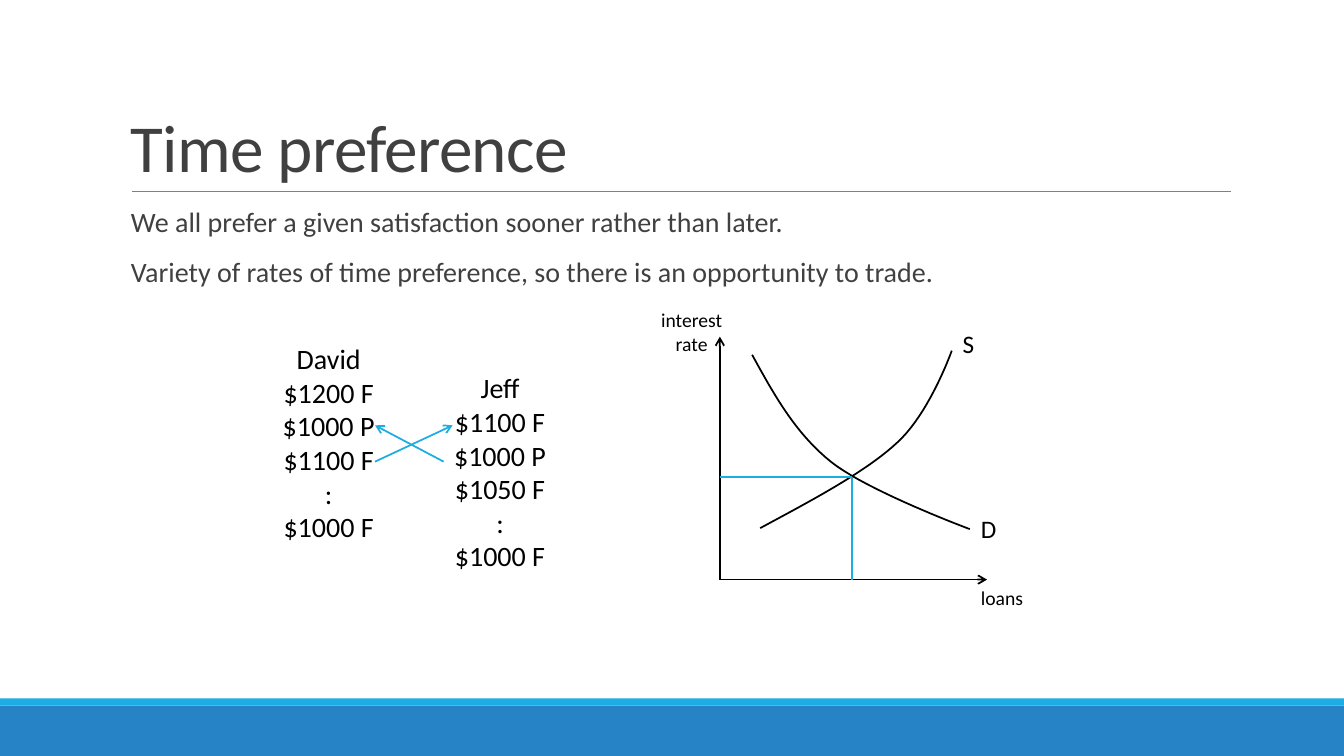
"""Build the time preference slide: two borrowers' value scales and a loan market."""
from dataclasses import dataclass

from lxml.etree import SubElement
from pptx import Presentation
from pptx.dml.color import RGBColor
from pptx.enum.shapes import MSO_CONNECTOR, MSO_SHAPE
from pptx.enum.text import MSO_ANCHOR, PP_ALIGN
from pptx.oxml.ns import qn
from pptx.util import Inches, Pt


@dataclass(frozen=True)
class Theme:
    font: str = "Calibri"
    heading: str = "404040"
    ink: str = "000000"
    rule: str = "808080"
    accent: str = "1CADE4"
    band: str = "2683C6"
    title_size: int = 48
    body_size: int = 20
    curve_size: int = 18
    axis_size: int = 14
    hairline: float = 0.5
    stroke: float = 1.25


THEME = Theme()
SLIDE_SIZE = (13.33, 7.5)
TITLE = "Time preference"
STATEMENTS = [
    "We all prefer a given satisfaction sooner rather than later.",
    "Variety of rates of time preference, so there is an opportunity to trade.",
]
BANDS = [((0, 7, 13.33, 0.5), THEME.band), ((0, 6.93, 13.33, 0.07), THEME.accent)]
SCALES = [
    ((2.7, 3.34, 1.12, 2.12),
     ["David", "$1200 F", "$1000 P", "$1100 F", ":", "$1000 F"]),
    ((4.4, 3.63, 1.12, 2.12),
     ["Jeff", "$1100 F", "$1000 P", "$1050 F", ":", "$1000 F"]),
]
TRADES = [((3.72, 4.58), (4.49, 4.22)), ((4.4, 4.58), (3.72, 4.22))]
ORIGIN = (7.14, 5.75)
AXIS_ENDS = [(7.14, 3.34), (9.79, 5.75)]
EQUILIBRIUM = (8.45, 4.73)
DEMAND = [(7.46, 3.52), (7.67, 3.9), (7.88, 4.29), (8.24, 4.58),
          (8.6, 4.87), (9.62, 5.25), (9.62, 5.25)]
SUPPLY = [(7.54, 5.24), (8.06, 4.96), (8.59, 4.68), (8.9, 4.39),
          (9.22, 4.1), (9.44, 3.48), (9.44, 3.48)]
LABELS = [
    ((6.44, 3.01, 0.84, 0.57), ["interest", "rate"], THEME.axis_size, PP_ALIGN.CENTER),
    ((9.63, 5.76, 0.63, 0.34), ["loans"], THEME.axis_size, PP_ALIGN.LEFT),
    ((9.45, 3.21, 0.32, 0.4), ["S"], THEME.curve_size, PP_ALIGN.LEFT),
    ((9.63, 5.04, 0.37, 0.4), ["D"], THEME.curve_size, PP_ALIGN.LEFT),
]
CURVE_STEPS = 20


def rgb(code):
    return RGBColor.from_string(code)


def add_text(slide, box, lines, size, color=THEME.ink, align=PP_ALIGN.LEFT, wrap=False):
    frame = slide.shapes.add_textbox(*map(Inches, box)).text_frame
    frame.word_wrap = wrap
    for index, line in enumerate(lines):
        paragraph = frame.paragraphs[0] if index == 0 else frame.add_paragraph()
        paragraph.alignment = align
        run = paragraph.add_run()
        run.text = line
        run.font.name = THEME.font
        run.font.size = Pt(size)
        run.font.color.rgb = rgb(color)
    return frame


def add_line(slide, start, end, color, width=THEME.stroke, arrow=False):
    line = slide.shapes.add_connector(
        MSO_CONNECTOR.STRAIGHT, *map(Inches, (*start, *end)))
    line.line.color.rgb = rgb(color)
    line.line.width = Pt(width)
    if arrow:
        SubElement(line.line._get_or_add_ln(), qn("a:tailEnd"), type="arrow")
    SubElement(line._element.spPr, qn("a:effectLst"))


def bezier(controls, t):
    weights = ((1 - t) ** 3, 3 * t * (1 - t) ** 2, 3 * t ** 2 * (1 - t), t ** 3)
    return tuple(sum(w * point[axis] for w, point in zip(weights, controls))
                 for axis in (0, 1))


def add_curve(slide, controls):
    points = [bezier(controls[first:first + 4], step / CURVE_STEPS)
              for first in range(0, len(controls) - 1, 3)
              for step in range(1, CURVE_STEPS + 1)]
    builder = slide.shapes.build_freeform(*controls[0], scale=Inches(1) / 1.0)
    builder = slide.shapes.build_freeform(*map(Inches, controls[0]))
    builder.add_line_segments([tuple(map(Inches, p)) for p in points], close=False)
    curve = builder.convert_to_shape()
    curve.shadow.inherit = False
    curve.fill.background()
    curve.line.color.rgb = rgb(THEME.ink)
    curve.line.width = Pt(THEME.stroke)


def add_frame(slide):
    for box, color in BANDS:
        band = slide.shapes.add_shape(MSO_SHAPE.RECTANGLE, *map(Inches, box))
        band.shadow.inherit = False
        band.fill.solid()
        band.fill.fore_color.rgb = rgb(color)
        band.line.fill.background()
    add_line(slide, (1.31, 1.9), (12.21, 1.9), THEME.rule, THEME.hairline)

    title = add_text(slide, (1.2, 0.31, 11, 1.59), [TITLE], THEME.title_size,
                     THEME.heading, wrap=True)
    title.vertical_anchor = MSO_ANCHOR.BOTTOM
    title.paragraphs[0].line_spacing = 0.85
    title.paragraphs[0].runs[0].font._element.set("spc", "-50")

    body = add_text(slide, (1.2, 2.02, 11, 4.4), STATEMENTS, THEME.body_size,
                    THEME.heading, wrap=True)
    body.margin_right = 0
    for statement in body.paragraphs:
        statement.line_spacing = 0.9
        statement.space_before = Pt(12)
        statement.space_after = Pt(2)


def add_scales(slide):
    for box, ranking in SCALES:
        add_text(slide, box, ranking, THEME.body_size, align=PP_ALIGN.CENTER)
    for start, end in TRADES:
        add_line(slide, start, end, THEME.accent, arrow=True)


def add_market(slide):
    for end in AXIS_ENDS:
        add_line(slide, ORIGIN, end, THEME.ink, arrow=True)
    for controls in (DEMAND, SUPPLY):
        add_curve(slide, controls)
    for box, lines, size, align in LABELS:
        add_text(slide, box, lines, size, align=align)
    for foot in ((ORIGIN[0], EQUILIBRIUM[1]), (EQUILIBRIUM[0], ORIGIN[1])):
        add_line(slide, EQUILIBRIUM, foot, THEME.accent)


def main():
    deck = Presentation()
    deck.slide_width, deck.slide_height = map(Inches, SLIDE_SIZE)
    slide = deck.slides.add_slide(deck.slide_layouts[6])
    add_frame(slide)
    add_scales(slide)
    add_market(slide)
    deck.save("out.pptx")


if __name__ == "__main__":
    main()
